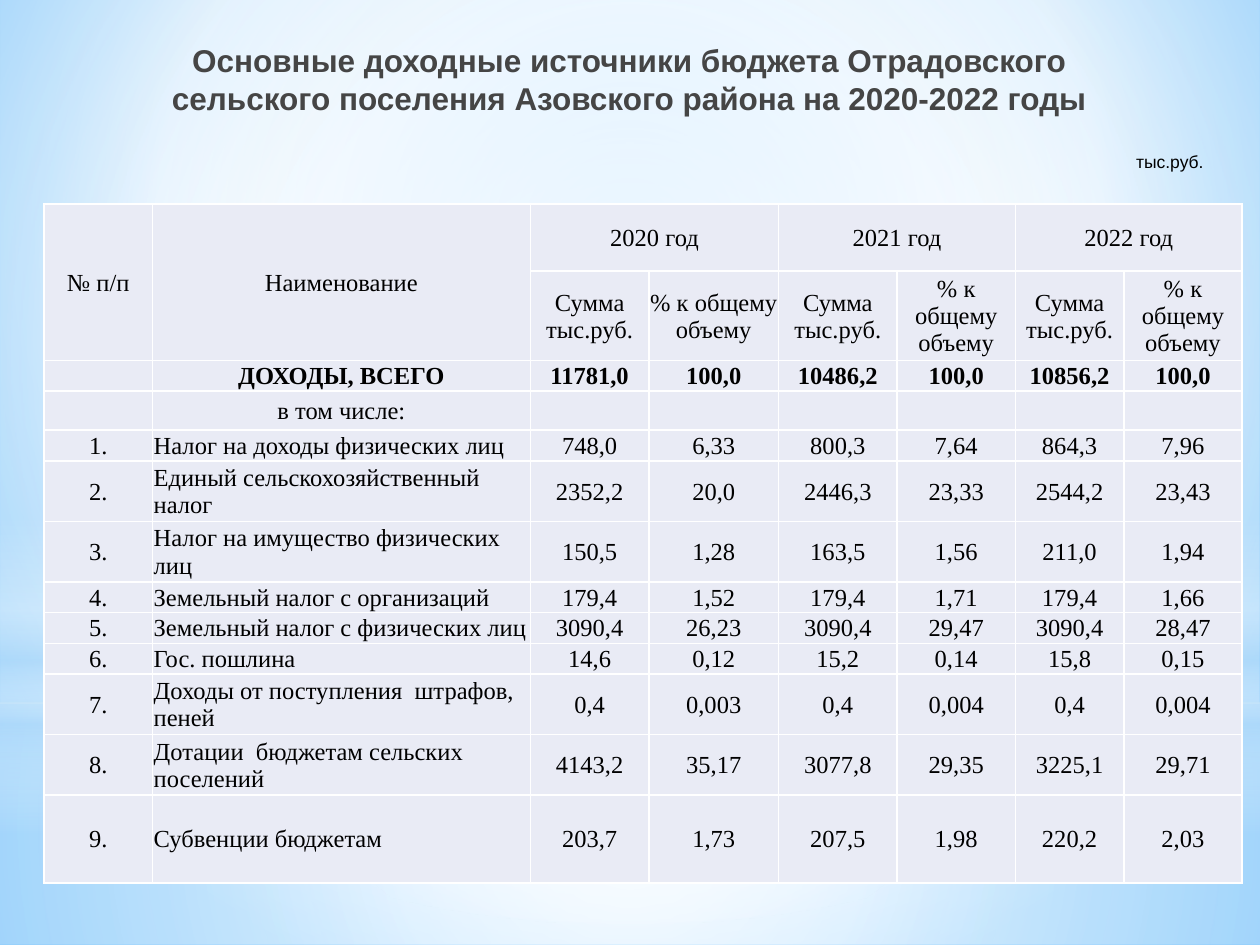
import pptx
import pptx.dml.color
import pptx.enum.shapes
import pptx.enum.text
import pptx.oxml.ns
import pptx.util
from lxml import etree

qn = pptx.oxml.ns.qn
Inches, Pt = pptx.util.Inches, pptx.util.Pt
ALIGN = pptx.enum.text.PP_ALIGN
SHAPE = pptx.enum.shapes.MSO_SHAPE

COLORS = {
    "sky": "9ED5FF", "deep_sky": "5BB9FF", "haze": "B4DCFA", "white": "FFFFFF",
    "cell": "E9EBF5", "title": "454545", "text": "000000",
}

prs = pptx.Presentation()
prs.slide_width, prs.slide_height = Inches(10), Inches(7.5)
slide = prs.slides.add_slide(prs.slide_layouts[6])


def box(left, top, width, height):
    """Turn percentages of the slide's size into lengths."""
    return (int(prs.slide_width * left / 100), int(prs.slide_height * top / 100),
            int(prs.slide_width * width / 100), int(prs.slide_height * height / 100))


def set_gradient(fill, owner, stops, focus=None):
    """Stops are (position %, colour, opacity %); without a focus the gradient runs down."""
    fill.gradient()
    grad = next(owner.iter(qn("a:gradFill")))
    grad.clear()
    grad.set("rotWithShape", "1")
    stop_list = etree.SubElement(grad, qn("a:gsLst"))
    for position, color, opacity in stops:
        stop = etree.SubElement(stop_list, qn("a:gs"), pos=str(position * 1000))
        rgb = etree.SubElement(stop, qn("a:srgbClr"), val=COLORS[color])
        if opacity < 100:
            etree.SubElement(rgb, qn("a:alpha"), val=str(opacity * 1000))
    if focus:
        circle = etree.SubElement(grad, qn("a:path"), path="circle")
        sides = {side: str(share * 1000) for side, share in zip("ltrb", focus)}
        etree.SubElement(circle, qn("a:fillToRect"), **sides)
    else:
        etree.SubElement(grad, qn("a:lin"), ang="5400000", scaled="0")


# Backdrop
set_gradient(slide.background.fill, slide._element,
             [(0, "sky", 100), (60, "white", 100), (100, "deep_sky", 100)], (20, 10, 20, 60))

CENTER = (50, 50, 50, 50)
backdrop = [
    (SHAPE.RECTANGLE, 74.4, 25.6, CENTER,
     [(0, "white", 91), (37, "white", 76), (100, "haze", 79)]),
    (SHAPE.RECTANGLE, 0, 74.4, CENTER,
     [(0, "white", 89), (48, "white", 62), (100, "haze", 79)]),
    (SHAPE.RECTANGLE, 54.93, 33.33, None,
     [(0, "white", 0), (29, "white", 30), (45, "haze", 40),
      (55, "white", 26), (65, "haze", 60), (100, "white", 0)]),
    (SHAPE.OVAL, 23.33, 74.4, CENTER, [(0, "white", 100), (56, "white", 0)]),
]
for outline, top, height, focus, stops in backdrop:
    glow = slide.shapes.add_shape(outline, *box(0, top, 100, height))
    glow.shadow.inherit = False
    glow.line.fill.background()
    set_gradient(glow.fill, glow._element.spPr, stops, focus)

# Title and unit
captions = [
    ("Основные доходные источники бюджета Отрадовского сельского поселения "
     "Азовского района на 2020-2022 годы",
     box(12.1, 3.73, 75.7, 16.67), ALIGN.CENTER, 18, True, "title"),
    ("тыс.руб.", box(79.2, 15.33, 17.3, 3.6), ALIGN.RIGHT, 10, False, "text"),
]
for wording, place, align, size, bold, color in captions:
    frame = slide.shapes.add_textbox(*place).text_frame
    frame.word_wrap = True
    frame.text = wording
    line = frame.paragraphs[0]
    line.alignment = align
    line.font.name, line.font.size, line.font.bold = "Arial", Pt(size), bold
    line.font.color.rgb = pptx.dml.color.RGBColor.from_string(COLORS[color])

# Revenue table
YEARS = ["2020 год", "2021 год", "2022 год"]
header = ["№ п/п", "Наименование"]
for year in YEARS:
    header += [year, ""]
revenue = [
    header,
    ["", ""] + ["Сумма тыс.руб.", "% к общему объему"] * len(YEARS),
    ["", "ДОХОДЫ, ВСЕГО", "11781,0", "100,0", "10486,2", "100,0", "10856,2", "100,0"],
    ["", "в том числе:"] + [""] * 6,
    ["1.", "Налог на доходы физических лиц", "748,0", "6,33", "800,3", "7,64", "864,3", "7,96"],
    ["2.", "Единый сельскохозяйственный налог",
     "2352,2", "20,0", "2446,3", "23,33", "2544,2", "23,43"],
    ["3.", "Налог на имущество физических лиц",
     "150,5", "1,28", "163,5", "1,56", "211,0", "1,94"],
    ["4.", "Земельный налог с организаций", "179,4", "1,52", "179,4", "1,71", "179,4", "1,66"],
    ["5.", "Земельный налог с физических лиц",
     "3090,4", "26,23", "3090,4", "29,47", "3090,4", "28,47"],
    ["6.", "Гос. пошлина", "14,6", "0,12", "15,2", "0,14", "15,8", "0,15"],
    ["7.", "Доходы от поступления  штрафов, пеней",
     "0,4", "0,003", "0,4", "0,004", "0,4", "0,004"],
    ["8.", "Дотации  бюджетам сельских поселений",
     "4143,2", "35,17", "3077,8", "29,35", "3225,1", "29,71"],
    ["9.", "Субвенции бюджетам", "203,7", "1,73", "207,5", "1,98", "220,2", "2,03"],
]
COLUMN_WIDTHS = [0.86, 3, 0.94, 1.03, 0.94, 0.94, 0.86, 0.94]
ROW_HEIGHTS = [0.53, 0.71, 0.24, 0.31, 0.24, 0.48, 0.48, 0.24, 0.24, 0.24, 0.48, 0.48, 0.7]
TOTAL_ROW, FIRST_SOURCE_ROW, NAME_COLUMN = 2, 4, 1

table = slide.shapes.add_table(len(revenue), len(COLUMN_WIDTHS),
                               *box(3.5, 21.6, 95.3, 71.47)).table
table.first_row = table.horz_banding = False
for column, width in zip(table.columns, COLUMN_WIDTHS):
    column.width = Inches(width)
for row, height in zip(table.rows, ROW_HEIGHTS):
    row.height = Inches(height)

for r, values in enumerate(revenue):
    for c, value in enumerate(values):
        cell = table.cell(r, c)
        cell.margin_left = cell.margin_right = cell.margin_top = Inches(0.01)
        cell.margin_bottom = 0
        cell.vertical_anchor = pptx.enum.text.MSO_ANCHOR.MIDDLE
        for side in ("lnL", "lnR", "lnT", "lnB"):
            border = etree.SubElement(cell._tc.tcPr, qn(f"a:{side}"), w=str(Pt(1)))
            ink = etree.SubElement(border, qn("a:solidFill"))
            etree.SubElement(ink, qn("a:srgbClr"), val=COLORS["white"])
        cell.fill.solid()
        cell.fill.fore_color.rgb = pptx.dml.color.RGBColor.from_string(COLORS["cell"])
        cell.text = value
        line = cell.text_frame.paragraphs[0]
        is_source_name = c == NAME_COLUMN and r >= FIRST_SOURCE_ROW
        line.alignment = ALIGN.LEFT if is_source_name else ALIGN.CENTER
        line.font.name, line.font.size = "Times New Roman", Pt(14)
        line.font.bold = r == TOTAL_ROW
        line.font.color.rgb = pptx.dml.color.RGBColor.from_string(COLORS["text"])
        if not value:  # keeps empty cells from stretching their row
            etree.SubElement(line._p, qn("a:endParaRPr"), sz="1400")

for c in (0, NAME_COLUMN):
    table.cell(0, c).merge(table.cell(1, c))
for c in range(2, len(COLUMN_WIDTHS), 2):
    table.cell(0, c).merge(table.cell(0, c + 1))

prs.save("out.pptx")
